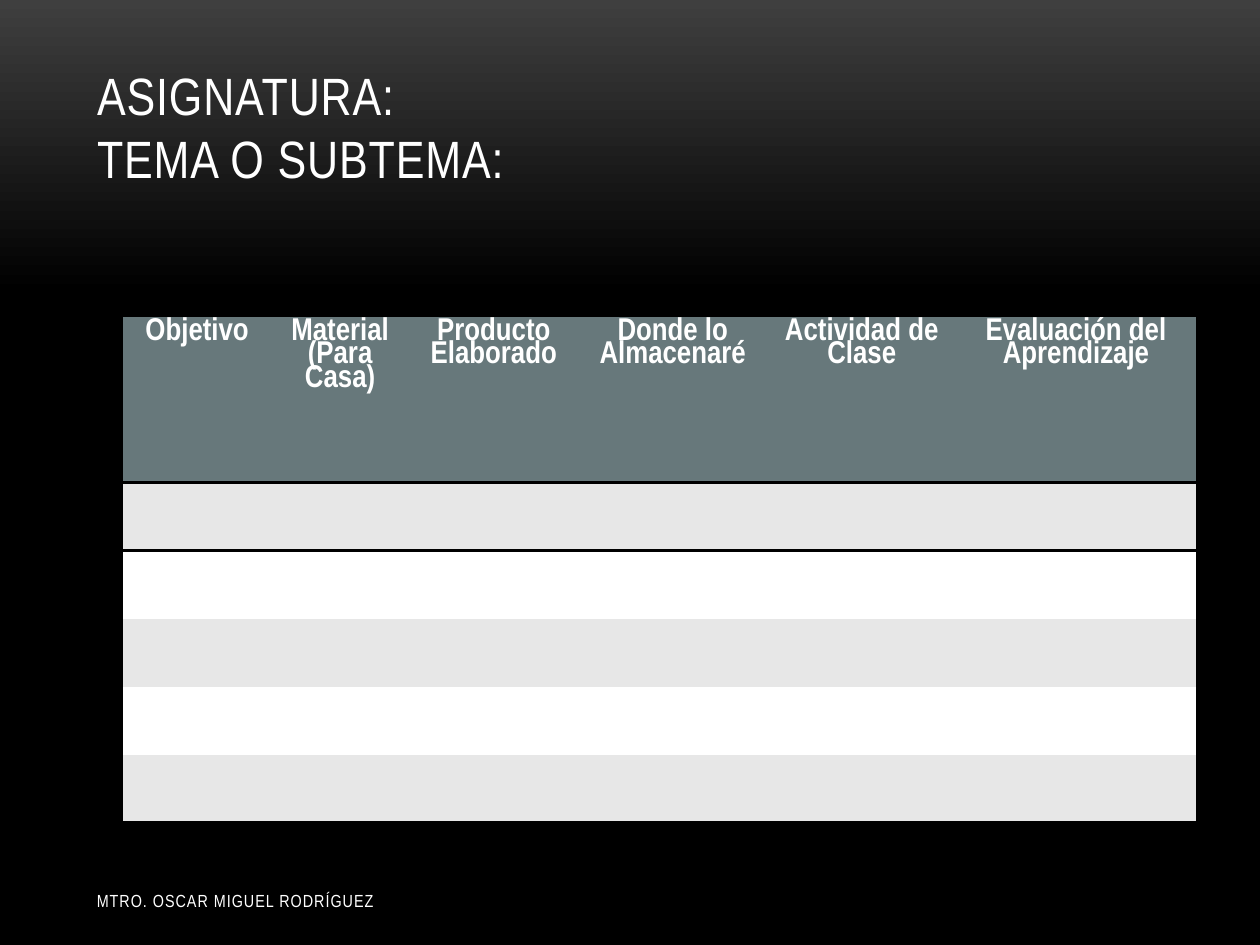
"""Build a class planning slide with a title, an empty table and a footer."""
from lxml.etree import SubElement
from pptx import Presentation
from pptx.dml.color import RGBColor
from pptx.enum.text import MSO_ANCHOR, MSO_AUTO_SIZE, PP_ALIGN
from pptx.oxml import parse_xml
from pptx.oxml.ns import nsdecls, qn
from pptx.util import Inches, Pt


def color(code):
    return RGBColor.from_string(code)


def style(para, size, bold=False):
    para.font.name = "Arial Narrow"
    para.font.size = Pt(size)
    para.font.bold = bold
    para.font.color.rgb = color("FFFFFF")


deck = Presentation()
deck.slide_width, deck.slide_height = Inches(10), Inches(7.5)
slide = deck.slides.add_slide(deck.slide_layouts[5])

back = slide.background.fill
back.gradient()
back.gradient_angle = 270
for stop, place, code in zip(back.gradient_stops, (0, 0.31), ("3F3F3F", "000000")):
    stop.position = place
    stop.color.rgb = color(code)

title = slide.shapes.title
title.left, title.top = Inches(0.67), Inches(0.3)
title.width, title.height = Inches(8.67), Inches(1.25)
footer = slide.shapes.add_textbox(Inches(0.67), Inches(6.95), Inches(3.17), Inches(0.4))
for shape, text, size, gap, anchor in (
    (title, "ASIGNATURA:\vTEMA O SUBTEMA:", 30, 50, MSO_ANCHOR.BOTTOM),
    (footer, "MTRO. OSCAR MIGUEL RODRÍGUEZ", 10, 60, MSO_ANCHOR.MIDDLE),
):
    frame = shape.text_frame
    frame.word_wrap = True
    frame.auto_size = MSO_AUTO_SIZE.NONE
    frame.vertical_anchor = anchor
    para = frame.paragraphs[0]
    para.text = text
    para.alignment = PP_ALIGN.LEFT
    style(para, size)
    for run in para.runs:
        run.font.size = Pt(size)
        run._r.get_or_add_rPr().set("spc", str(gap))

heads = ["Objetivo", "Material (Para Casa)", "Producto\nElaborado",
         "Donde lo Almacenaré", "Actividad de Clase", "Evaluación del Aprendizaje"]
widths = [1.17, 1.1, 1.34, 1.5, 1.5, 1.9]
heights = [1.33] + [0.54] * 5
fills = ["67787B"] + ["E7E7E7", "FFFFFF"] * 2 + ["E7E7E7"]
edges = {0: ("lnT", "lnB"), 1: ("lnT",), 5: ("lnB",)}

table = slide.shapes.add_table(
    len(heights), len(widths), Inches(0.98), Inches(2.5), Inches(8.5), Inches(4.02)
).table
props = table._tbl.tblPr
props.find(qn("a:tableStyleId")).text = "{2D5ABB26-0587-4C30-8999-92F81FD0307C}"
for col, width in zip(table.columns, widths):
    col.width = Inches(width)

for index, (row, height) in enumerate(zip(table.rows, heights)):
    row.height = Inches(height)
    for cell, head in zip(row.cells, heads):
        cell.fill.solid()
        cell.fill.fore_color.rgb = color(fills[index])
        for spot, side in enumerate(edges.get(index, ())):
            line = parse_xml(f'<a:{side} {nsdecls("a")} w="{Pt(2)}"/>')
            solid = SubElement(line, qn("a:solidFill"))
            SubElement(solid, qn("a:srgbClr")).set("val", "000000")
            cell._tc.get_or_add_tcPr().insert(spot, line)
        if index == 0:
            cell.text = head
            for para in cell.text_frame.paragraphs:
                para.alignment = PP_ALIGN.CENTER
                para.line_spacing = 0.8
                style(para, 18, True)

deck.save("out.pptx")
